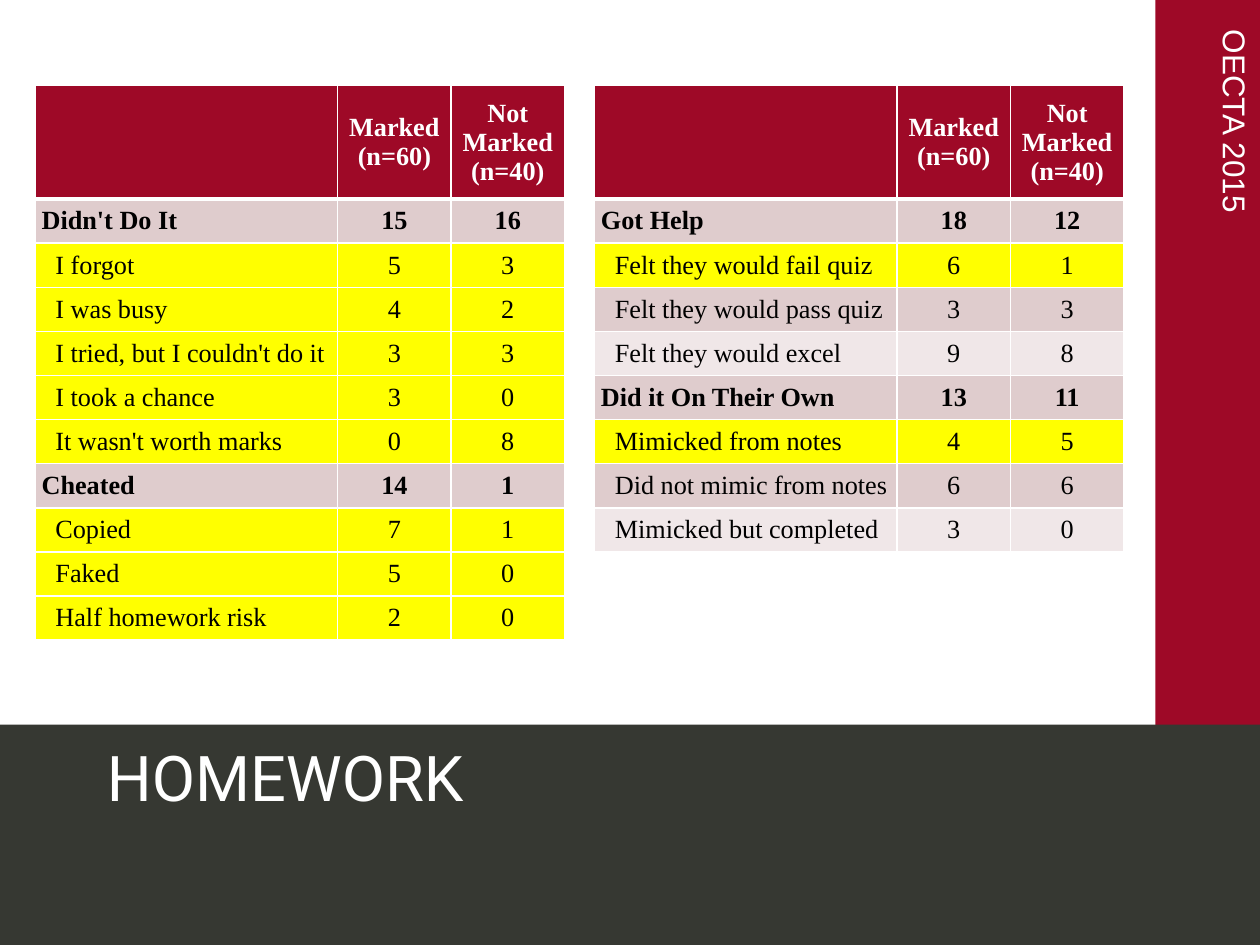
from lxml.etree import SubElement
from pptx import Presentation
from pptx.dml.color import RGBColor
from pptx.enum.shapes import MSO_SHAPE
from pptx.enum.text import MSO_ANCHOR, PP_ALIGN
from pptx.oxml.ns import qn
from pptx.util import Inches, Pt

HUES = {"red": "9E0927", "dark": "363832", "pink": "DFCCCD", "pale": "F0E7E8",
        "yellow": "FFFF00", "white": "FFFFFF", "black": "000000"}


def style(para, font, size, hue, bold=False):
    for run in para.runs:
        run.font.name = font
        run.font.size = Pt(size)
        run.font.bold = bold
        run.font.color.rgb = RGBColor.from_string(HUES[hue])


def edge(cell, side, width):
    line = SubElement(cell._tc.get_or_add_tcPr(), qn("a:" + side), w=str(Pt(width)))
    fill = SubElement(line, qn("a:solidFill"))
    SubElement(fill, qn("a:srgbClr"), val=HUES["white"])


prs = Presentation()
prs.slide_width, prs.slide_height = Inches(10), Inches(7.5)
slide = prs.slides.add_slide(prs.slide_layouts[6])

# Side and bottom bands
for hue, box in [("red", (9.17, 0, 0.83, 7.5)), ("dark", (0, 5.75, 10, 1.75))]:
    band = slide.shapes.add_shape(MSO_SHAPE.RECTANGLE, *map(Inches, box))
    band.shadow.inherit = False
    band.fill.solid()
    band.fill.fore_color.rgb = RGBColor.from_string(HUES[hue])
    band.line.fill.background()

# Side label and title
labels = [("OECTA 2015", (7.85, 1.75, 3.91, 0.4), 90, 0.24, "Arial", 18),
          ("HOMEWORK", (0.75, 5.75, 8.92, 0.83), 0, 0.1, "Roboto", 36)]
for text, box, turn, inset, font, size in labels:
    label = slide.shapes.add_textbox(*map(Inches, box))
    label.rotation = turn
    frame = label.text_frame
    frame.word_wrap = True
    frame.margin_left = Inches(inset)
    frame.vertical_anchor = MSO_ANCHOR.MIDDLE
    frame.text = text
    style(frame.paragraphs[0], font, size, "white")

# Survey counts: kind, reason, marked, not marked
left = [("head", "Didn't Do It", 15, 16),
        ("mark", "I forgot", 5, 3),
        ("mark", "I was busy", 4, 2),
        ("mark", "I tried, but I couldn't do it", 3, 3),
        ("mark", "I took a chance", 3, 0),
        ("mark", "It wasn't worth marks", 0, 8),
        ("head", "Cheated", 14, 1),
        ("mark", "Copied", 7, 1),
        ("mark", "Faked", 5, 0),
        ("mark", "Half homework risk", 2, 0)]
right = [("head", "Got Help", 18, 12),
         ("mark", "Felt they would fail quiz", 6, 1),
         ("plain", "Felt they would pass quiz", 3, 3),
         ("plain", "Felt they would excel", 9, 8),
         ("head", "Did it On Their Own", 13, 11),
         ("mark", "Mimicked from notes", 4, 5),
         ("plain", "Did not mimic from notes", 6, 6),
         ("plain", "Mimicked but completed", 3, 0)]
top = ("top", "", "Marked\n(n=60)", "Not Marked\n(n=40)")

# Table grid
widths = [2.4, 0.9, 0.9, 0.24, 2.4, 0.9, 0.9]
heights = [0.9] + [0.35] * len(left)
table = slide.shapes.add_table(len(heights), len(widths), Inches(0.28), Inches(0.68),
                               Inches(sum(widths)), Inches(sum(heights))).table
table.first_row = table.horz_banding = False
for col, width in zip(table.columns, widths):
    col.width = Inches(width)
for row, height in zip(table.rows, heights):
    row.height = Inches(height)

# Clear cells with white rules, thicker under the header
for r in range(len(heights)):
    for c in range(len(widths)):
        cell = table.cell(r, c)
        cell.margin_left = cell.margin_right = cell.margin_top = cell.margin_bottom = 0
        cell.vertical_anchor = MSO_ANCHOR.MIDDLE
        for side in ("lnL", "lnR", "lnT", "lnB"):
            edge(cell, side, 3 if (r, side) in [(0, "lnB"), (1, "lnT")] else 1)
        cell.fill.background()

# Both halves of the table
for start, block in [(0, left), (4, right)]:
    for r, (kind, *values) in enumerate([top] + block):
        hue = {"top": "red", "mark": "yellow"}.get(kind, "pink" if r % 2 else "pale")
        for c, value in enumerate(values):
            cell = table.cell(r, start + c)
            cell.fill.solid()
            cell.fill.fore_color.rgb = RGBColor.from_string(HUES[hue])
            if c == 0:
                cell.margin_left = Inches(0.05 if kind == "head" else 0.16)
            elif kind == "top":
                cell.margin_left = cell.margin_right = Inches(0.07)
            cell.text_frame.text = str(value)
            for para in cell.text_frame.paragraphs:
                para.alignment = PP_ALIGN.CENTER if c else PP_ALIGN.LEFT
                style(para, "Times New Roman", 15, "white" if kind == "top" else "black",
                      kind in ("top", "head"))

prs.save("out.pptx")
